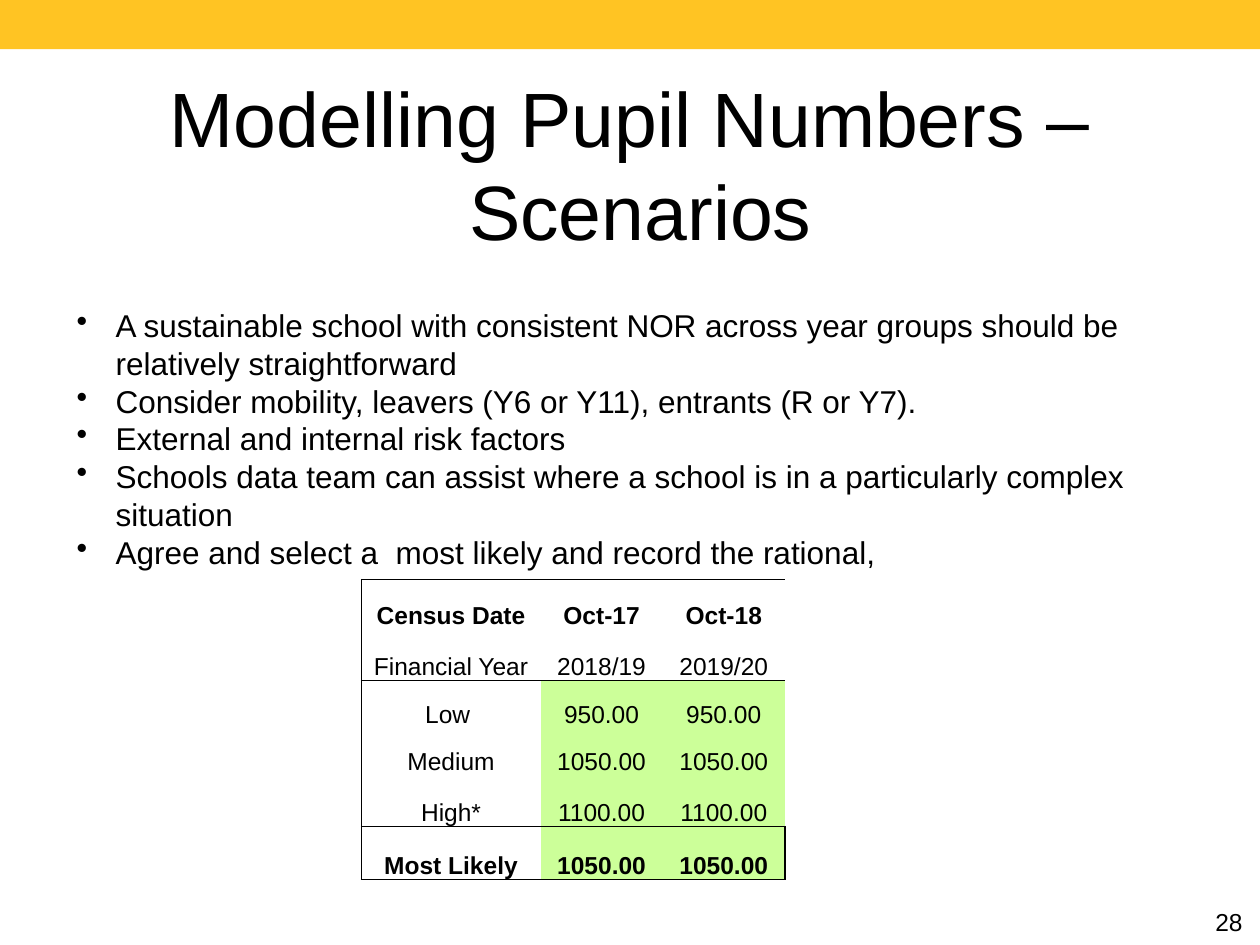
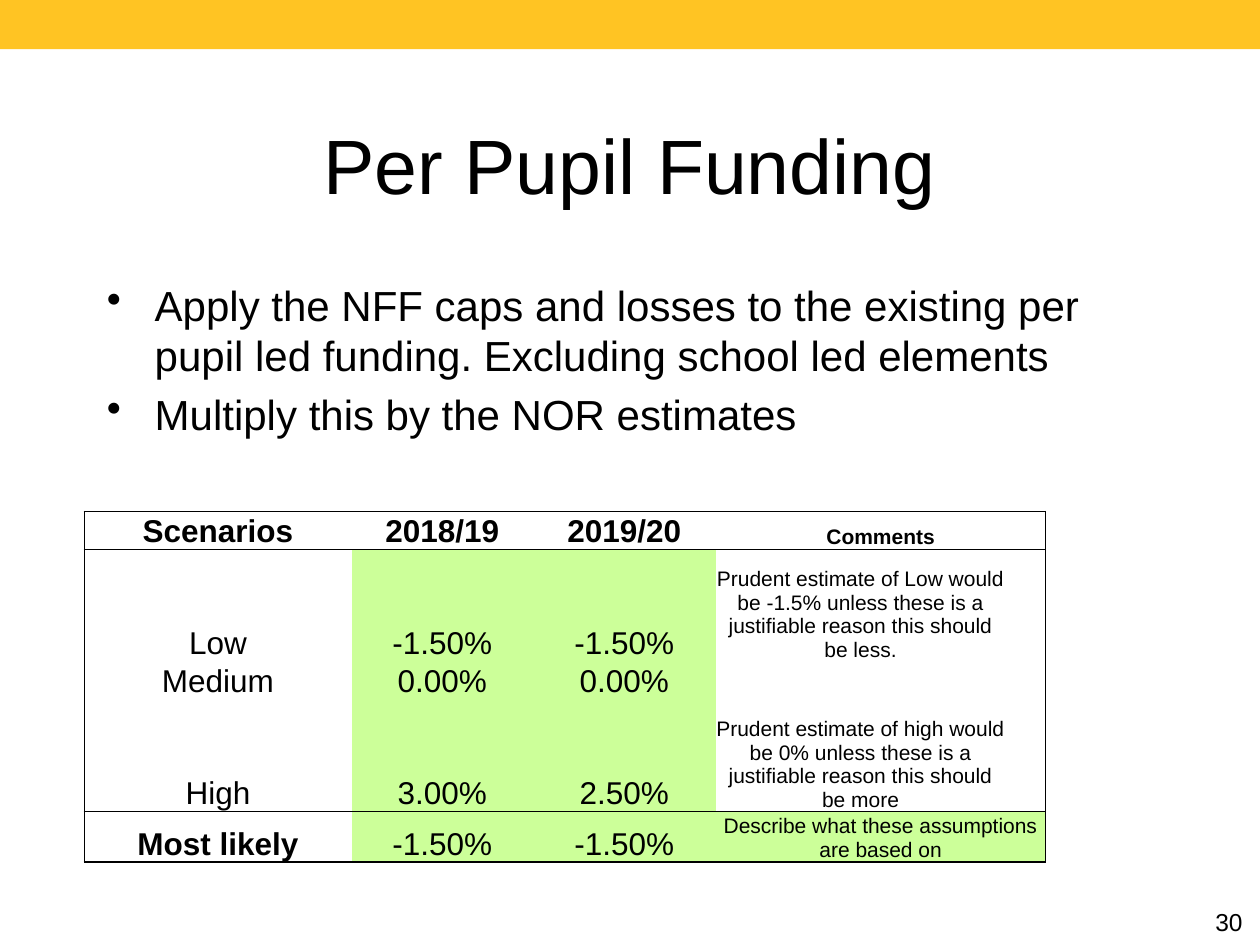
import itertools

import lxml.etree
import pptx
import pptx.dml.color
import pptx.enum.shapes
import pptx.enum.text
import pptx.oxml.ns
import pptx.util

Inches = pptx.util.Inches
Pt = pptx.util.Pt
ALIGN = pptx.enum.text.PP_ALIGN
ANCHOR = pptx.enum.text.MSO_ANCHOR

FONT = "Arial"
BLACK, BAND, GREEN = "000000", "FFC423", "CCFF99"


def block(rows, columns):
    """The set of (row, column) positions where rows and columns cross."""
    return set(itertools.product(rows, columns))


# In table rows, None continues the cell to its left; "" is an empty cell.
# "rules" holds the row boundaries that carry a horizontal line.
SLIDES = [
    {
        "title": ["Modelling Pupil Numbers –", " Scenarios"],
        "number": "28",
        "bullets": {
            "at": (0.51, 2.38, 8.98, 2.22), "size": 18, "indent": 0.31, "gap": 0,
            "points": [
                "A sustainable school with consistent NOR across year groups should be relatively straightforward",
                "Consider mobility, leavers (Y6 or Y11), entrants (R or Y7).",
                "External and internal risk factors",
                "Schools data team can assist where a school is in a particularly complex situation",
                "Agree and select a  most likely and record the rational,",
            ],
        },
        "table": {
            "left": 2.87, "top": 4.6,
            "widths": [1.42, 0.97, 0.97],
            "heights": [0.4, 0.4, 0.38, 0.38, 0.4, 0.42],
            "column_sizes": [14, 14, 14],
            "rows": [
                ["Census Date", "Oct-17", "Oct-18"],
                ["Financial Year", "2018/19", "2019/20"],
                ["Low ", "950.00", "950.00"],
                ["Medium", "1050.00", "1050.00"],
                ["High*", "1100.00", "1100.00"],
                ["Most Likely", "1050.00", "1050.00"],
            ],
            "bold": block([0, 5], range(3)),
            "green": block(range(2, 6), [1, 2]),
            "rules": {0, 2, 5, 6},
            "right_edge_rows": {5},
        },
    },
    {
        "title": ["Per Pupil Funding"],
        "number": "30",
        "bullets": {
            "at": (0.75, 2.17, 8.5, 4.5), "size": 24, "indent": 0.38, "gap": 4.8,
            "points": [
                "Apply the NFF caps and losses to the existing per pupil led funding. Excluding school led elements",
                "Multiply this by the NOR estimates",
            ],
        },
        "table": {
            "left": 0.67, "top": 4.06,
            "widths": [2.12, 1.44, 1.45, 1.45, 0.85, 0.32],
            "heights": [0.28, 0.89, 0.26, 0.89, 0.36],
            "column_sizes": [18, 18, 18, 12, 12, 12],
            "rows": [
                ["Scenarios", "2018/19", "2019/20", "Comments", None, None],
                ["Low", "-1.50%", "-1.50%",
                 "Prudent estimate of Low would be -1.5% unless these is a justifiable reason this should be less.",
                 None, ""],
                ["Medium", "0.00%", "0.00%", "", "", ""],
                ["High", "3.00%", "2.50%",
                 "Prudent estimate of high would be 0% unless these is a justifiable reason this should be more",
                 None, ""],
                ["Most likely", "-1.50%", "-1.50%",
                 "Describe what these assumptions are based on", None, None],
            ],
            "bold": block([0], range(6)) | {(4, 0)},
            "green": block(range(1, 5), [1, 2]) | {(4, 3)},
            "rules": {0, 1, 4, 5},
            "right_edge_rows": set(range(5)),
        },
    },
]


def color(value):
    return pptx.dml.color.RGBColor.from_string(value)


def add_run(paragraph, text, size, bold=False):
    run = paragraph.add_run()
    run.text = text
    run.font.name = FONT
    run.font.size = Pt(size)
    run.font.bold = bold
    run.font.color.rgb = color(BLACK)


def add_text_frame(slide, at, anchor=ANCHOR.TOP):
    frame = slide.shapes.add_textbox(*map(Inches, at)).text_frame
    frame.word_wrap = True
    frame.vertical_anchor = anchor
    return frame


def add_frame(slide, title, number):
    """Top band, title and page number shared by all slides."""
    band = slide.shapes.add_shape(
        pptx.enum.shapes.MSO_SHAPE.RECTANGLE, 0, 0, Inches(10), Inches(0.39))
    band.shadow.inherit = False
    band.fill.solid()
    band.fill.fore_color.rgb = color(BAND)
    band.line.fill.background()

    heading = add_text_frame(slide, (0.75, 0.67, 8.5, 1.25), ANCHOR.MIDDLE).paragraphs[0]
    heading.alignment = ALIGN.CENTER
    for i, line in enumerate(title):
        if i:
            heading.add_line_break()
        add_run(heading, line, 44)

    page = add_text_frame(slide, (7.88, 7.15, 2.08, 0.31)).paragraphs[0]
    page.alignment = ALIGN.RIGHT
    add_run(page, number, 14)


def add_bullets(slide, at, size, indent, gap, points):
    frame = add_text_frame(slide, at)
    for i, point in enumerate(points):
        paragraph = frame.add_paragraph() if i else frame.paragraphs[0]
        properties = paragraph._p.get_or_add_pPr()
        properties.set("marL", str(Inches(indent)))
        properties.set("indent", str(-Inches(indent)))
        lxml.etree.SubElement(properties, pptx.oxml.ns.qn("a:buChar"), char="•")
        paragraph.space_before = Pt(gap if i else 0)
        add_run(paragraph, point, size)


def set_borders(cell, drawn):
    """Draw the sides named in drawn (of L, R, T, B) and clear the others."""
    qn = pptx.oxml.ns.qn
    properties = cell._tc.get_or_add_tcPr()
    for i, side in enumerate("LRTB"):
        line = lxml.etree.Element(qn("a:ln" + side), w=str(Pt(1)))
        if side in drawn:
            fill = lxml.etree.SubElement(line, qn("a:solidFill"))
            lxml.etree.SubElement(fill, qn("a:srgbClr"), val=BLACK)
        else:
            lxml.etree.SubElement(line, qn("a:noFill"))
        properties.insert(i, line)


def add_table(slide, content):
    rows, widths, heights = content["rows"], content["widths"], content["heights"]
    table = slide.shapes.add_table(
        len(rows), len(widths), Inches(content["left"]), Inches(content["top"]),
        Inches(sum(widths)), Inches(sum(heights))).table
    table.first_row = table.horz_banding = False
    for column, width in zip(table.columns, widths):
        column.width = Inches(width)
    for row, height in zip(table.rows, heights):
        row.height = Inches(height)

    for (r, row), c in itertools.product(enumerate(rows), range(len(widths))):
        cell, text = table.cell(r, c), row[c]
        end = c
        while end + 1 < len(row) and row[end + 1] is None:
            end += 1
        if text is not None and end > c:
            cell.merge(table.cell(r, end))
        cell.margin_left = cell.margin_right = cell.margin_top = cell.margin_bottom = 0
        cell.vertical_anchor = ANCHOR.BOTTOM
        if (r, c) in content["green"]:
            cell.fill.solid()
            cell.fill.fore_color.rgb = color(GREEN)
        else:
            cell.fill.background()
        sides = {
            "L": c == 0,
            "R": end == len(widths) - 1 and r in content["right_edge_rows"],
            "T": r in content["rules"],
            "B": r + 1 in content["rules"],
        }
        set_borders(cell, [side for side, drawn in sides.items() if drawn])
        paragraph = cell.text_frame.paragraphs[0]
        paragraph.alignment = ALIGN.CENTER
        if text:
            add_run(paragraph, text, content["column_sizes"][c], (r, c) in content["bold"])
        else:
            paragraph.font.size = Pt(content["column_sizes"][c])


def main():
    deck = pptx.Presentation()
    deck.slide_width, deck.slide_height = Inches(10), Inches(7.5)
    for content in SLIDES:
        slide = deck.slides.add_slide(deck.slide_layouts[6])
        add_frame(slide, content["title"], content["number"])
        add_bullets(slide, **content["bullets"])
        add_table(slide, content["table"])
    deck.save("out.pptx")


if __name__ == "__main__":
    main()
